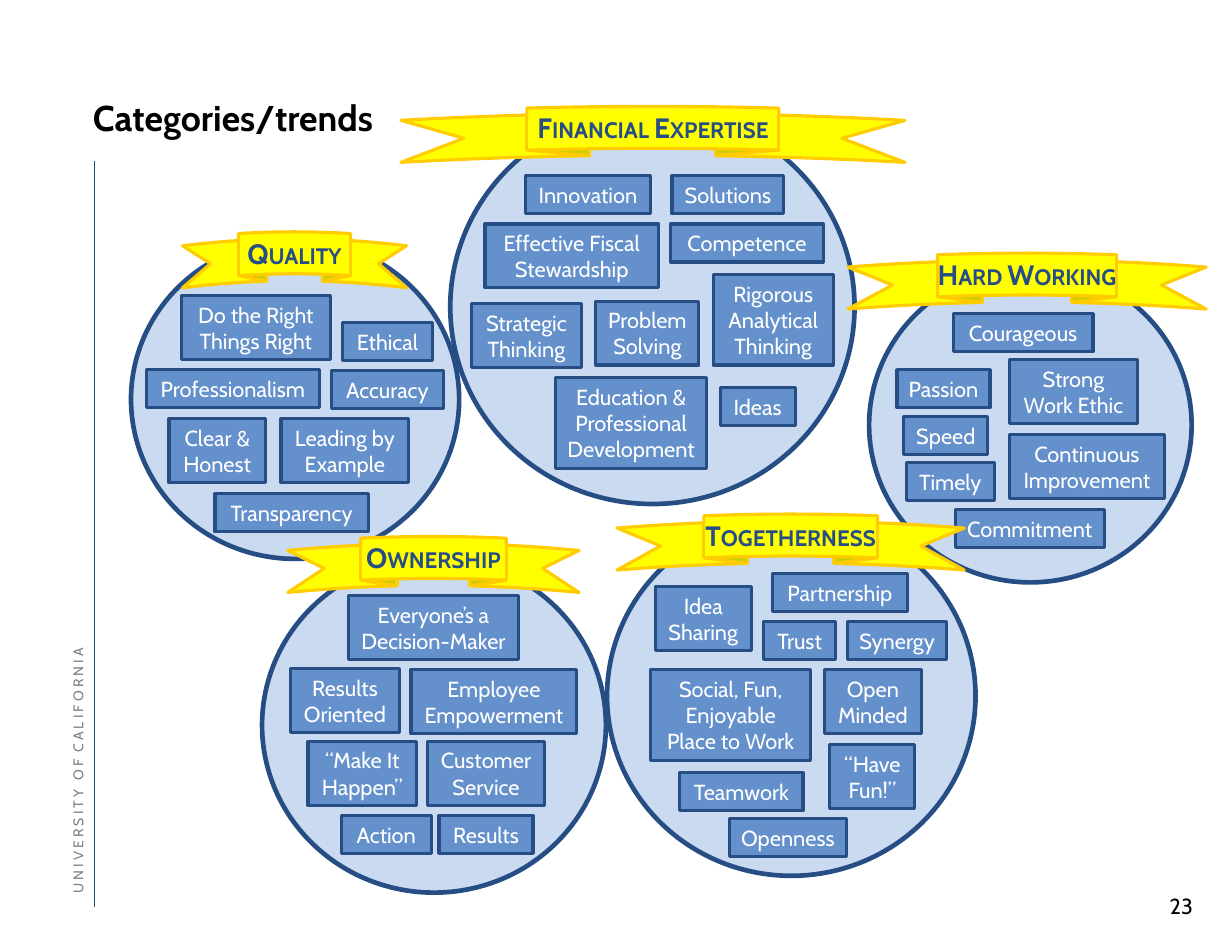
from lxml import etree
from pptx import Presentation
from pptx import util as u
from pptx.dml.color import RGBColor
from pptx.enum import shapes, text
from pptx.oxml.ns import qn

# The slide is a grid of 1100 columns by 850 rows
COLS, ROWS = 1100, 850
CELL = u.Inches(11) // COLS
FONT = "Cabin"
NAVY, BLUE, PALE = "264E84", "6490CB", "CADAF0"
YELLOW, GOLD = "FFFF00", "FFCC00"
BLACK, WHITE, GREY = "000000", "FFFFFF", "808080"
TAG_HEIGHT = {1: 34, 2: 57, 3: 81}  # by lines of text
RIBBON_HEIGHT, LABEL_HEIGHT = 50, 40

# name, circle box, ribbon (column, row, width), label width,
# tags (text, lines, column, row, width); columns and rows count from the circle's corner
CATEGORIES = [
    ("Financial Expertise", (402, 98, 361, 352), (-44, -3, 450), 232, [
        ("Innovation", 1, 67, 59, 112),
        ("Solutions", 1, 198, 59, 100),
        ("Effective Fiscal Stewardship", 2, 31, 102, 155),
        ("Competence", 1, 197, 102, 136),
        ("Strategic Thinking", 2, 19, 173, 98),
        ("Problem Solving", 2, 130, 171, 92),
        ("Rigorous Analytical Thinking", 3, 235, 147, 107),
        ("Education & Professional Development", 3, 94, 239, 135),
        ("Ideas", 1, 241, 248, 67),
    ]),
    ("Quality", (117, 214, 293, 285), (46, -7, 200), 167, [
        ("Do the Right Things Right", 2, 45, 50, 133),
        ("Ethical", 1, 189, 74, 80),
        ("Professionalism", 1, 14, 116, 154),
        ("Accuracy", 1, 179, 117, 100),
        ("Clear & Honest", 2, 34, 160, 86),
        ("Leading by Example", 2, 134, 160, 114),
        ("Transparency", 1, 75, 227, 137),
    ]),
    ("Ownership", (234, 498, 307, 299), (23, -19, 260), 183, [
        ("Everyone’s a Decision-Maker", 2, 77, 34, 152),
        ("Results Oriented", 2, 25, 99, 98),
        ("Employee Empowerment", 2, 133, 100, 148),
        ("“Make It Happen”", 2, 41, 164, 97),
        ("Customer Service", 2, 148, 164, 104),
        ("Action", 1, 71, 230, 80),
        ("Results", 1, 158, 230, 84),
    ]),
    ("Hard Working", (776, 239, 288, 281), (-19, -13, 320), 183, [
        ("Courageous", 1, 75, 41, 125),
        ("Passion", 1, 25, 91, 83),
        ("Strong Work Ethic", 2, 125, 82, 115),
        ("Speed", 1, 31, 133, 75),
        ("Continuous Improvement", 2, 125, 149, 139),
        ("Timely", 1, 33, 174, 79),
        ("Commitment", 1, 77, 216, 133),
    ]),
    ("Togetherness", (542, 461, 329, 321), (9, -2, 310), 183, [
        ("Idea Sharing", 2, 43, 63, 86),
        ("Partnership", 1, 148, 51, 120),
        ("Trust", 1, 140, 94, 64),
        ("Synergy", 1, 215, 94, 88),
        ("Social, Fun, Enjoyable Place to Work", 3, 39, 137, 143),
        ("Open Minded", 2, 194, 137, 87),
        ("Teamwork", 1, 65, 229, 110),
        ("“Have Fun!”", 2, 199, 204, 76),
        ("Openness", 1, 109, 270, 105),
    ]),
]


def rgb(value):
    return RGBColor.from_string(value)


def grid(*cells):
    return [u.Emu(round(c * CELL)) for c in cells]


def write(sp, words, size, color, align, bold=False, grow=True, wrap=True):
    tf = sp.text_frame
    tf.word_wrap = wrap
    if grow:
        tf.auto_size = text.MSO_AUTO_SIZE.SHAPE_TO_FIT_TEXT
    p = tf.paragraphs[0]
    p.alignment = align
    r = p.add_run()
    r.text = words
    r.font.name, r.font.size, r.font.bold = FONT, u.Pt(size), bold
    r.font.color.rgb = rgb(color)
    return p, r


def no_margins(tf):
    tf.margin_left = tf.margin_right = tf.margin_top = tf.margin_bottom = 0
    tf.vertical_anchor = text.MSO_ANCHOR.BOTTOM


def add_figure(parent, kind, box, fill, line, weight):
    sp = parent.shapes.add_shape(kind, *grid(*box))
    sp.shadow.inherit = False
    sp.fill.solid()
    sp.fill.fore_color.rgb = rgb(fill)
    sp.line.color.rgb = rgb(line)
    sp.line.width = u.Pt(weight)
    return sp


def add_category(s, name, box, ribbon, label_width, tags):
    group = s.shapes.add_group_shape()
    left, top = box[:2]
    shape = shapes.MSO_SHAPE
    add_figure(group, shape.OVAL, box, PALE, NAVY, 3)

    # Ribbon with its label centred on it
    x, y, width = left + ribbon[0], top + ribbon[1], ribbon[2]
    add_figure(group, shape.CURVED_UP_RIBBON, (x, y, width, RIBBON_HEIGHT), YELLOW, GOLD, 2)
    label = group.shapes.add_textbox(
        *grid(x + (width - label_width) / 2, y - 1, label_width, LABEL_HEIGHT))
    p, r = write(label, name, 18, NAVY, text.PP_ALIGN.CENTER, bold=True)
    r.font._element.set("cap", "small")

    # Tags
    for words, lines, col, row, tag_width in tags:
        tag_box = (left + col, top + row, tag_width, TAG_HEIGHT[lines])
        tag = add_figure(group, shape.RECTANGLE, tag_box, BLUE, NAVY, 2)
        write(tag, words, 14, WHITE, text.PP_ALIGN.CENTER)


def add_title(s, words, box):
    sp = s.shapes.title
    sp.left, sp.top, sp.width, sp.height = grid(*box)
    no_margins(sp.text_frame)
    sp.text_frame.auto_size = text.MSO_AUTO_SIZE.NONE
    p, r = write(sp, words, 23, BLACK, text.PP_ALIGN.LEFT, bold=True, grow=False)
    p.line_spacing = u.Pt(27.9)


def add_frame(s):
    # Vertical rule
    rule = s.shapes.add_connector(shapes.MSO_CONNECTOR.STRAIGHT, *grid(84, 144, 84, 810))
    rule.line.color.rgb = rgb(NAVY)
    rule.line.width = u.Pt(0.35)
    etree.SubElement(rule._element.spPr, qn("a:effectLst"))

    # Page number
    number = s.shapes.add_textbox(*grid(1025, 792, 50, 33))
    write(number, "23", 14, BLACK, text.PP_ALIGN.RIGHT)

    # Name running up the left edge
    side = s.shapes.add_textbox(*grid(-147, 574, 433, 15))
    side.rotation = 270
    no_margins(side.text_frame)
    p, r = write(side, "U N I V E R S I T Y   O F  C A L I F O R N I A", 9, GREY,
                 text.PP_ALIGN.LEFT, grow=False, wrap=False)
    p.line_spacing = u.Pt(12)


def main():
    prs = Presentation()
    prs.slide_width, prs.slide_height = grid(COLS, ROWS)
    s = prs.slides.add_slide(prs.slide_layouts[5])
    add_frame(s)
    add_title(s, "Categories/trends", (83, 92, 292, 32))
    for category in CATEGORIES:
        add_category(s, *category)
    prs.save("out.pptx")


if __name__ == "__main__":
    main()
